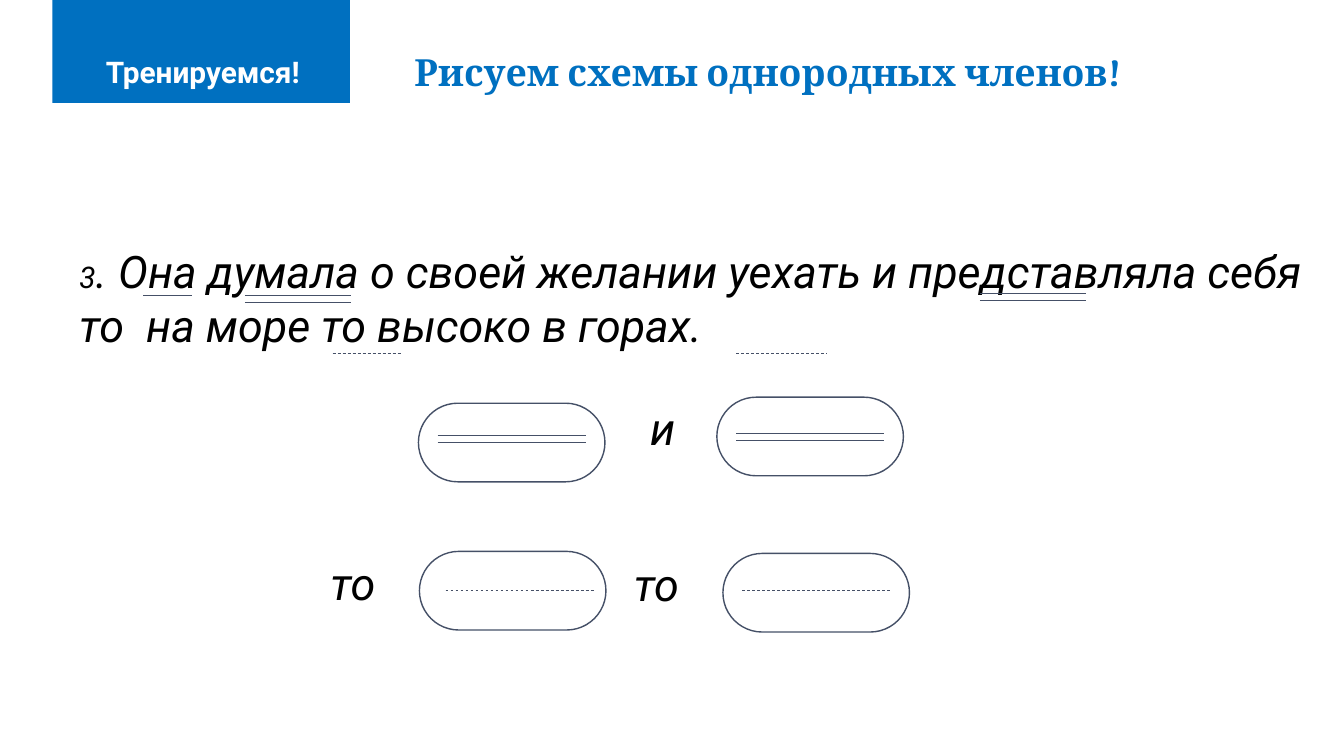
"""Build a slide with sentence diagrams of homogeneous parts."""
from pptx import Presentation
from pptx.dml.color import RGBColor
from pptx.enum.dml import MSO_LINE
from pptx.enum.shapes import MSO_CONNECTOR, MSO_SHAPE
from pptx.enum.text import MSO_ANCHOR, PP_ALIGN
from pptx.oxml.ns import qn
from pptx.util import Inches, Pt
from lxml.etree import SubElement

BLUE, INK, BLACK, WHITE = "0070C0", "455067", "000000", "FFFFFF"
BADGE = "Тренируемся!"
TITLE = "Рисуем схемы однородных членов!"
SENTENCE = [
    ("3", 21.3),
    (". Она думала о своей желании уехать и представляла себя "
     "то  на море то высоко в горах.", 32),
]
WORDS = [("и", 6.35, 3.93, 0.48), ("то", 6.19, 5.47, 0.88), ("то", 3.18, 5.46, 0.88)]
PILLS = [(4.15, 4), (7.11, 3.94), (4.16, 5.47), (7.17, 5.49)]
SINGLE = [(1.42, 2.93, 0.48)]
DOUBLE = [(2.43, 2.93, 1.05), (9.72, 2.91, 1.05), (4.34, 4.32, 1.47), (7.3, 4.3, 1.47)]
DASHED = [(3.3, 3.51, 0.68), (7.3, 3.51, 0.9), (4.42, 5.86, 1.47), (7.36, 5.86, 1.47)]
GAP = 0.07


def color(code):
    return RGBColor.from_string(code)


def write(shape, runs, font="Roboto", ink=BLACK, bold=False, italic=False,
          align=PP_ALIGN.LEFT, anchor=MSO_ANCHOR.TOP, inset=(0.1, 0.05, 0.1, 0.05), after=0):
    frame = shape.text_frame
    frame.word_wrap = True
    frame.vertical_anchor = anchor
    (frame.margin_left, frame.margin_top,
     frame.margin_right, frame.margin_bottom) = map(Inches, inset)
    para = frame.paragraphs[0]
    para.alignment = align
    para.space_after = Pt(after)
    for text, size in runs:
        run = para.add_run()
        run.text = text
        run.font.name, run.font.size = font, Pt(size)
        run.font.bold, run.font.italic = bold, italic
        run.font.color.rgb = color(ink)


def block(shapes, kind, box, fill, edge=None):
    shape = shapes.add_shape(kind, *map(Inches, box))
    shape.shadow.inherit = False
    shape.fill.solid()
    shape.fill.fore_color.rgb = color(fill)
    if edge:
        shape.line.color.rgb = color(edge)
        shape.line.width = Pt(1)
    else:
        shape.line.fill.background()
    return shape


def rule(shapes, left, top, width, dash=False):
    line = shapes.add_connector(
        MSO_CONNECTOR.STRAIGHT, *map(Inches, (left, top, left + width, top)))
    line.line.color.rgb = color(INK)
    line.line.width = Pt(0.5)
    if dash:
        line.line.dash_style = MSO_LINE.DASH
    SubElement(line._element.spPr, qn("a:effectLst"))


def main():
    deck = Presentation()
    deck.slide_width, deck.slide_height = Inches(13.33), Inches(7.5)
    slide = deck.slides.add_slide(deck.slide_layouts[5])
    shapes = slide.shapes

    title = shapes.title
    title.left, title.top, title.width, title.height = map(Inches, (3.98, 0.27, 9.18, 0.73))
    write(title, [(TITLE, 26.7)], font="Cambria", ink=BLUE, bold=True,
          anchor=MSO_ANCHOR.BOTTOM, inset=(0.13, 0.07, 0.13, 0.07))

    badge = block(shapes, MSO_SHAPE.RECTANGLE, (0.52, 0, 2.95, 1.02), BLUE)
    write(badge, [(BADGE, 21.3)], ink=WHITE, bold=True, align=PP_ALIGN.CENTER,
          anchor=MSO_ANCHOR.MIDDLE, inset=(0.13, 0.52, 0.1, 0.13))

    texts = [(SENTENCE, (0.69, 2.37, 12.46, 1.94))]
    texts += [([(word, 32)], (left, top, width, 0.64)) for word, left, top, width in WORDS]
    for runs, box in texts:
        write(shapes.add_textbox(*map(Inches, box)), runs, italic=True, after=16)

    for left, top in PILLS:
        pill = block(shapes, MSO_SHAPE.ROUNDED_RECTANGLE, (left, top, 1.85, 0.78), WHITE, INK)
        pill.adjustments[0] = 0.5

    for left, top, width in SINGLE + DOUBLE:
        rule(shapes, left, top, width)
    for left, top, width in DOUBLE:
        rule(shapes, left, top + GAP, width)
    for left, top, width in DASHED:
        rule(shapes, left, top, width, dash=True)

    deck.save("out.pptx")


if __name__ == "__main__":
    main()
